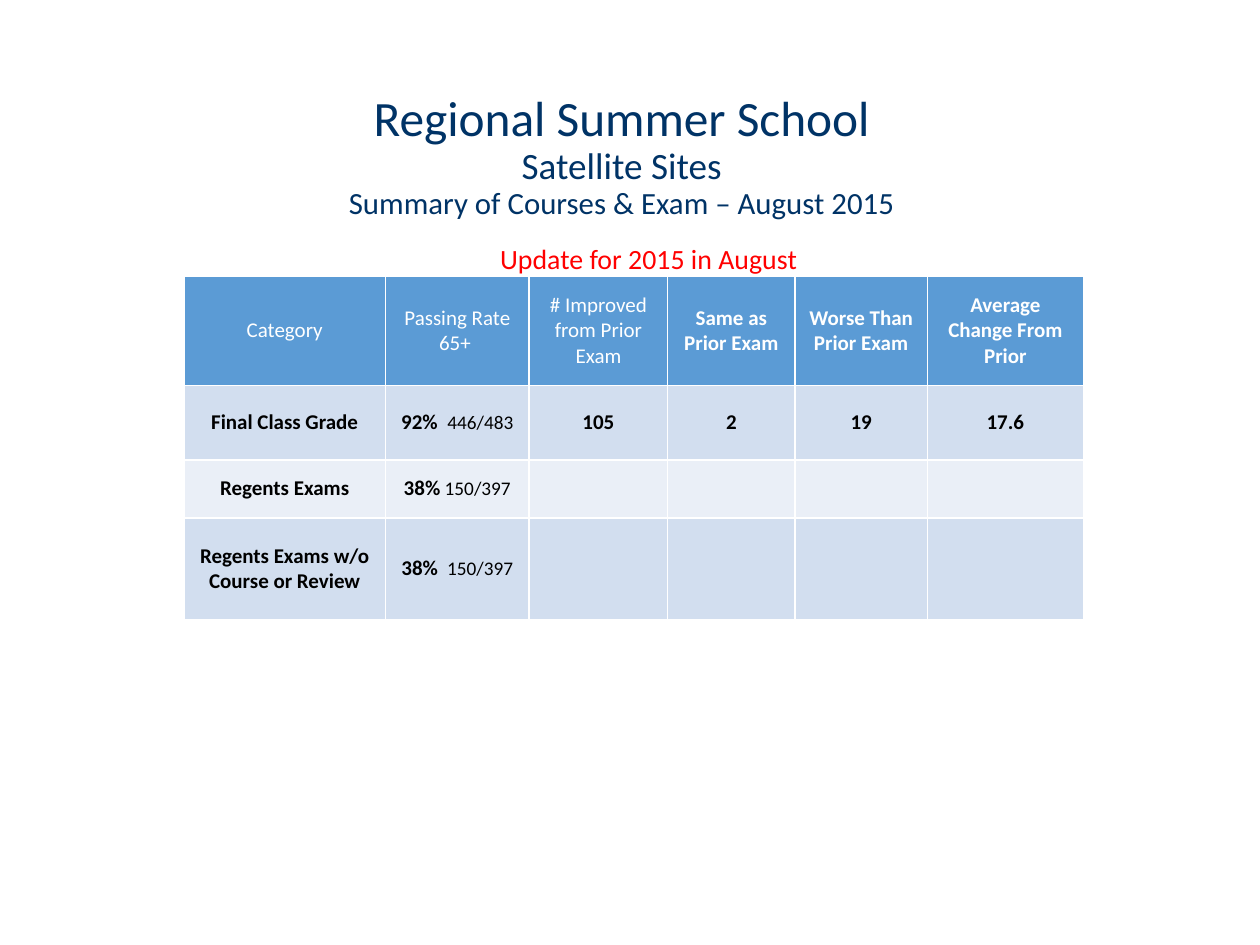
from copy import deepcopy

from pptx import Presentation
from pptx.dml.color import RGBColor
from pptx.enum.text import MSO_ANCHOR, MSO_AUTO_SIZE, PP_ALIGN
from pptx.util import Inches, Pt

FONT = "Calibri"
COLORS = {
    "title": "003366",
    "note": "FF0000",
    "header": "5B9BD5",
    "header_text": "FFFFFF",
    "body_text": "000000",
    "odd_row": "D2DEEF",
    "even_row": "EAEFF7",
}
TITLE_LINES = [
    ("Regional Summer School", 28.2),
    ("Satellite Sites", 21.2),
    ("Summary of Courses & Exam – August 2015", 17.6),
]
COLUMN_WIDTHS = [1.6, 1.14, 1.1, 1.01, 1.05, 1.24]
ROW_HEIGHTS = [0.87, 0.59, 0.46, 0.81]
PLAIN_HEADERS = ["Category", "Passing Rate 65+ ", "# Improved from Prior Exam"]
BOLD_HEADERS = ["Same as Prior Exam", "Worse Than Prior Exam", "Average Change From Prior"]
# Category, passing rate, count behind the rate, then the remaining columns
RESULTS = [
    ("Final Class Grade", "92%  ", "446/483", ["105", "2", "19", "17.6"]),
    ("Regents Exams", "38%", " 150/397", [""] * 4),
    ("Regents Exams w/o Course or Review", "38% ", " 150/397", [""] * 4),
]


def color(name):
    return RGBColor.from_string(COLORS[name])


def add_run(paragraph, text, size, color_name, bold=False):
    run = paragraph.add_run()
    run.text = text
    run.font.name = FONT
    run.font.size = Pt(size)
    run.font.bold = bold
    run.font.color.rgb = color(color_name)
    return run


def place_title(slide, box):
    title = slide.shapes.title
    title.left, title.top, title.width, title.height = map(Inches, box)
    frame = title.text_frame
    frame.auto_size = MSO_AUTO_SIZE.NONE
    frame.vertical_anchor = MSO_ANCHOR.MIDDLE
    paragraph = frame.paragraphs[0]
    paragraph.alignment = PP_ALIGN.CENTER
    paragraph.line_spacing = 0.9
    for index, (text, size) in enumerate(TITLE_LINES):
        run = add_run(paragraph, text, size, "title")
        if index < len(TITLE_LINES) - 1:
            # The break takes the run's size so that it does not stretch the line
            paragraph._p.add_br().append(deepcopy(run._r.rPr))


def table_rows():
    """Return each cell as a list of (text, size, bold) runs."""
    header = [[(text, 12, False)] for text in PLAIN_HEADERS]
    header += [[(text, 12, True)] for text in BOLD_HEADERS]
    rows = [header]
    for category, rate, count, values in RESULTS:
        row = [[(category, 12, True)], [(rate, 12, True), (count, 11, False)]]
        row += [[(value, 12, True)] if value else [] for value in values]
        rows.append(row)
    return rows


def fill_cell(cell, runs, fill_name, text_color):
    cell.fill.solid()
    cell.fill.fore_color.rgb = color(fill_name)
    cell.vertical_anchor = MSO_ANCHOR.MIDDLE
    cell.margin_left = cell.margin_right = Inches(0.07)
    cell.margin_top = cell.margin_bottom = Inches(0.05)
    paragraph = cell.text_frame.paragraphs[0]
    paragraph.alignment = PP_ALIGN.CENTER
    for text, size, bold in runs:
        add_run(paragraph, text, size, text_color, bold)


def place_table(slide, left, top):
    rows = table_rows()
    table = slide.shapes.add_table(
        len(ROW_HEIGHTS), len(COLUMN_WIDTHS), Inches(left), Inches(top),
        Inches(sum(COLUMN_WIDTHS)), Inches(sum(ROW_HEIGHTS)),
    ).table
    for column, width in zip(table.columns, COLUMN_WIDTHS):
        column.width = Inches(width)
    for index, (row, height, cells) in enumerate(zip(table.rows, ROW_HEIGHTS, rows)):
        row.height = Inches(height)
        if index == 0:
            fill_name, text_color = "header", "header_text"
        else:
            fill_name = "odd_row" if index % 2 else "even_row"
            text_color = "body_text"
        for cell, runs in zip(row.cells, cells):
            fill_cell(cell, runs, fill_name, text_color)


def place_note(slide, box):
    frame = slide.shapes.add_textbox(*map(Inches, box)).text_frame
    frame.word_wrap = True
    frame.auto_size = MSO_AUTO_SIZE.SHAPE_TO_FIT_TEXT
    add_run(frame.paragraphs[0], "Update for 2015 in August", 15.9, "note")


def main():
    presentation = Presentation()
    presentation.slide_width, presentation.slide_height = Inches(10), Inches(7.5)
    title_only = presentation.slide_layouts[5]
    slide = presentation.slides.add_slide(title_only)
    place_title(slide, (0.51, 0.64, 8.85, 1.22))
    place_table(slide, 1.46, 2.19)
    place_note(slide, (3.87, 1.87, 2.72, 0.37))
    presentation.save("out.pptx")


if __name__ == "__main__":
    main()
